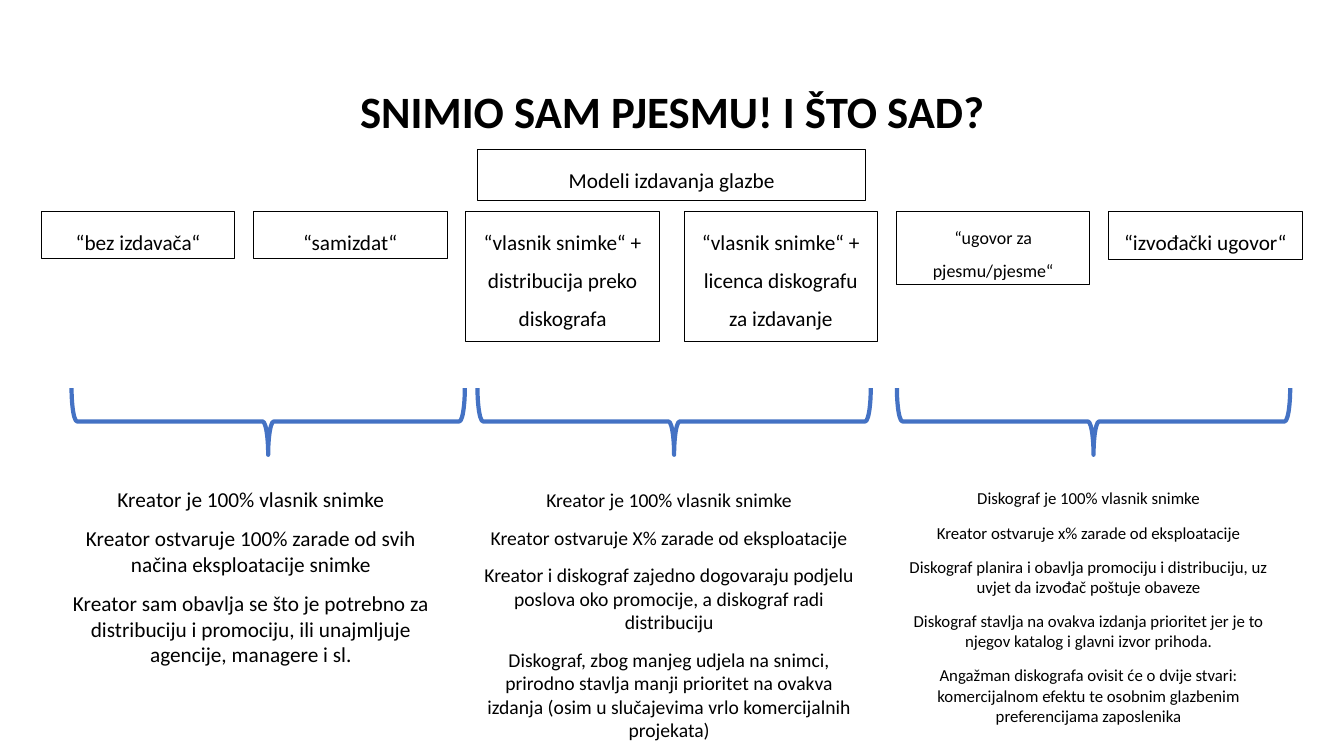
from dataclasses import dataclass

from lxml.etree import SubElement
from pptx import Presentation
from pptx.dml.color import RGBColor
from pptx.enum.shapes import MSO_SHAPE
from pptx.enum.text import MSO_ANCHOR, MSO_AUTO_SIZE, PP_ALIGN
from pptx.oxml.ns import qn
from pptx.shapes.autoshape import Shape
from pptx.slide import Slide
from pptx.util import Cm, Pt


@dataclass(frozen=True)
class Theme:
    font: str = "Calibri"
    ink: RGBColor = RGBColor(0x00, 0x00, 0x00)
    accent: RGBColor = RGBColor(0x44, 0x72, 0xC4)
    title: float = 32
    large: float = 15.2
    medium: float = 14
    compact: float = 12.8
    small: float = 12
    box_line: float = 0.75
    brace_line: float = 3


@dataclass(frozen=True)
class Model:
    label: str
    height: float
    size: float


@dataclass(frozen=True)
class Outcome:
    brace_center: float
    left: float
    top: float
    height: float
    size: float
    points: tuple[str, ...]


THEME = Theme()

# Content, lengths in centimetres
TITLE = "SNIMIO SAM PJESMU! I ŠTO SAD?"
SUBJECT = "Modeli izdavanja glazbe"

MODEL_TOP, MODEL_WIDTH, MODEL_PITCH = 5.32, 4.88, 5.35
HALF_STARTS = (1.04, 17.24)
MODELS = (
    Model("“bez izdavača“", 1.19, THEME.large),
    Model("“samizdat“", 1.19, THEME.large),
    Model("“vlasnik snimke“ + distribucija preko diskografa", 3.28, THEME.large),
    Model("“vlasnik snimke“ + licenca diskografu za izdavanje", 3.28, THEME.large),
    Model("“ugovor za pjesmu/pjesme“", 1.85, THEME.compact),
    Model("“izvođački ugovor“", 1.22, THEME.large),
)

COLUMN_WIDTH, BRACE_DEPTH, BRACE_MIDDLE = 9.91, 1.68, 10.62
OUTCOMES = (
    Outcome(6.76, 1.37, 12.12, 5.92, THEME.large, (
        "Kreator je 100% vlasnik snimke",
        "Kreator ostvaruje 100% zarade od svih načina eksploatacije snimke",
        "Kreator sam obavlja se što je potrebno za distribuciju i promociju, "
        "ili unajmljuje agencije, managere i sl.",
    )),
    Outcome(16.99, 11.91, 12.17, 7.8, THEME.medium, (
        "Kreator je 100% vlasnik snimke",
        "Kreator ostvaruje X% zarade od eksploatacije",
        "Kreator i diskograf zajedno dogovaraju podjelu poslova oko promocije, "
        "a diskograf radi distribuciju",
        "Diskograf, zbog manjeg udjela na snimci, prirodno stavlja manji prioritet "
        "na ovakva izdanja (osim u slučajevima vrlo komercijalnih projekata)",
    )),
    Outcome(27.56, 22.48, 12.17, 5.66, THEME.small, (
        "Diskograf je 100% vlasnik snimke",
        "Kreator ostvaruje x% zarade od eksploatacije",
        "Diskograf planira i obavlja promociju i distribuciju, "
        "uz uvjet da izvođač poštuje obaveze",
        "Diskograf stavlja na ovakva izdanja prioritet jer je to njegov katalog "
        "i glavni izvor prihoda.",
        "Angažman diskografa ovisit će o dvije stvari: komercijalnom efektu "
        "te osobnim glazbenim preferencijama zaposlenika",
    )),
)


def apply(target: object, values: dict[str, object]) -> None:
    for attribute, value in values.items():
        setattr(target, attribute, value)


def place(shape: Shape, left: float, top: float, width: float, height: float) -> None:
    apply(shape, {"left": Cm(left), "top": Cm(top),
                  "width": Cm(width), "height": Cm(height)})


def write(shape: Shape, lines: tuple[str, ...], size: float, spacing: float = 1.0,
          before: float = 10, bold: bool = False,
          anchor: MSO_ANCHOR = MSO_ANCHOR.TOP) -> None:
    frame = shape.text_frame
    frame.text = "\n".join(lines)
    apply(frame, {"word_wrap": True, "auto_size": MSO_AUTO_SIZE.NONE,
                  "vertical_anchor": anchor,
                  "margin_left": Cm(0.25), "margin_right": Cm(0.25),
                  "margin_top": Cm(0.13), "margin_bottom": Cm(0.13)})
    for paragraph in frame.paragraphs:
        apply(paragraph, {"alignment": PP_ALIGN.CENTER, "line_spacing": spacing,
                          "space_before": Pt(before), "space_after": Pt(0)})
        for run in paragraph.runs:
            apply(run.font, {"name": THEME.font, "size": Pt(size), "bold": bold})
            run.font.color.rgb = THEME.ink


def outline(shape: Shape, color: RGBColor, width: float) -> None:
    shape.fill.background()
    shape.line.color.rgb = color
    shape.line.width = Pt(width)


def draw_label(shape: Shape, label: str, size: float) -> None:
    outline(shape, THEME.ink, THEME.box_line)
    write(shape, (label,), size, spacing=1.5)


def draw_model(slide: Slide, model: Model, left: float) -> None:
    box = slide.shapes.add_shape(MSO_SHAPE.RECTANGLE, Cm(left), Cm(MODEL_TOP),
                                 Cm(MODEL_WIDTH), Cm(model.height))
    box.shadow.inherit = False
    draw_label(box, model.label, model.size)


def draw_outcome(slide: Slide, outcome: Outcome) -> None:
    brace = slide.shapes.add_shape(
        MSO_SHAPE.LEFT_BRACE,
        Cm(outcome.brace_center - BRACE_DEPTH / 2), Cm(BRACE_MIDDLE - COLUMN_WIDTH / 2),
        Cm(BRACE_DEPTH), Cm(COLUMN_WIDTH))
    brace.rotation = 270
    brace.shadow.inherit = False
    outline(brace, THEME.accent, THEME.brace_line)

    column = slide.shapes.add_textbox(Cm(outcome.left), Cm(outcome.top),
                                      Cm(COLUMN_WIDTH), Cm(outcome.height))
    write(column, outcome.points, outcome.size)


def main() -> None:
    deck = Presentation()
    apply(deck, {"slide_width": Cm(33.87), "slide_height": Cm(19.05)})
    slide = deck.slides.add_slide(deck.slide_layouts[1])

    # Title and subject
    title, subject = slide.placeholders
    place(title, 2.34, 1.02, 29.21, 3.68)
    write(title, (TITLE,), THEME.title, spacing=0.9, before=0, bold=True,
          anchor=MSO_ANCHOR.MIDDLE)
    place(subject, 12.04, 3.76, 9.78, 1.3)
    draw_label(subject, SUBJECT, THEME.large)
    properties = subject.text_frame.paragraphs[0]._p.get_or_add_pPr()
    properties.set("marL", "0")
    properties.set("indent", "0")
    SubElement(properties, qn("a:buNone"))

    # Publishing models, three in each half
    for index, model in enumerate(MODELS):
        half, step = divmod(index, 3)
        draw_model(slide, model, HALF_STARTS[half] + step * MODEL_PITCH)

    # Braces and what each pair of models means
    for outcome in OUTCOMES:
        draw_outcome(slide, outcome)

    deck.save("out.pptx")


if __name__ == "__main__":
    main()
